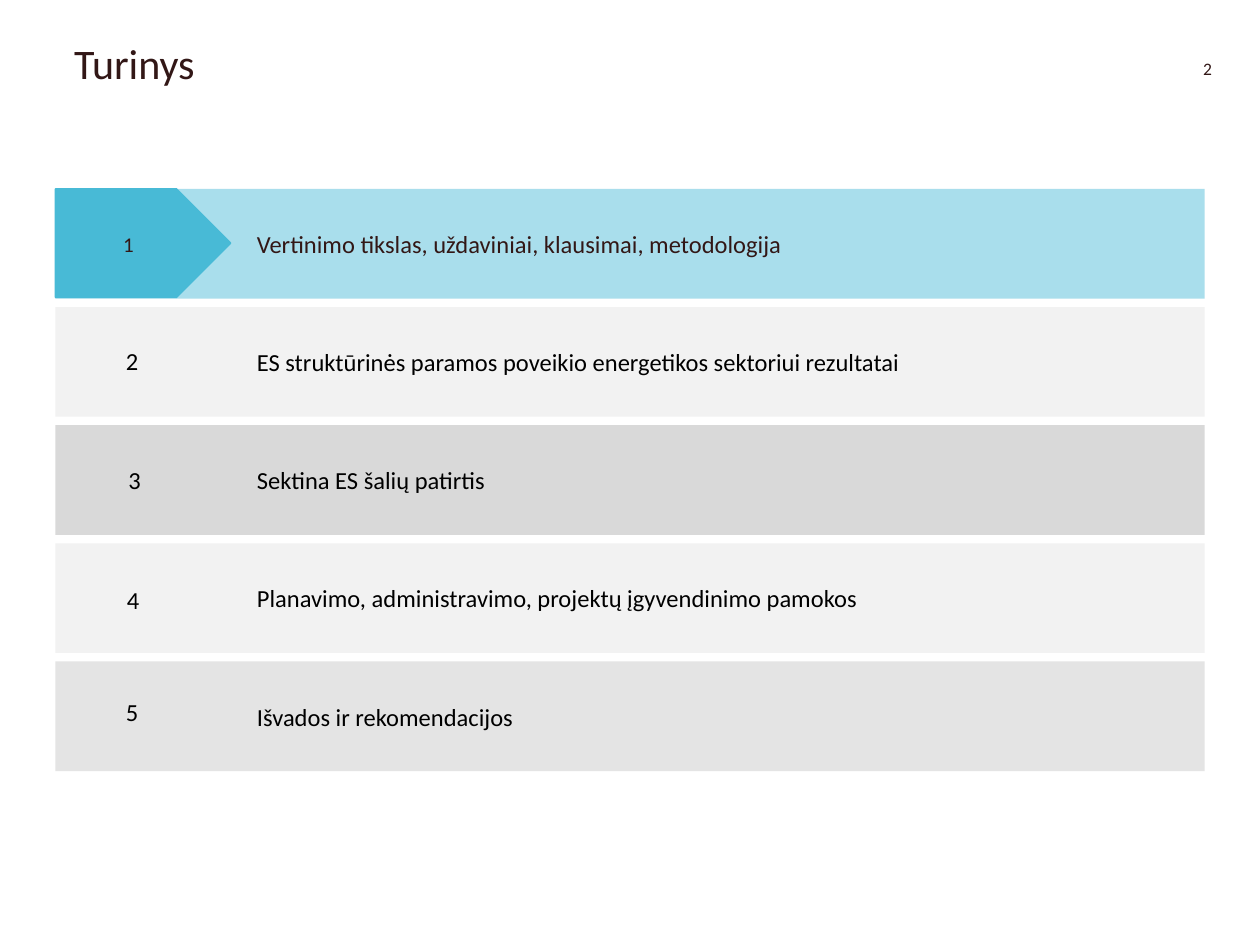
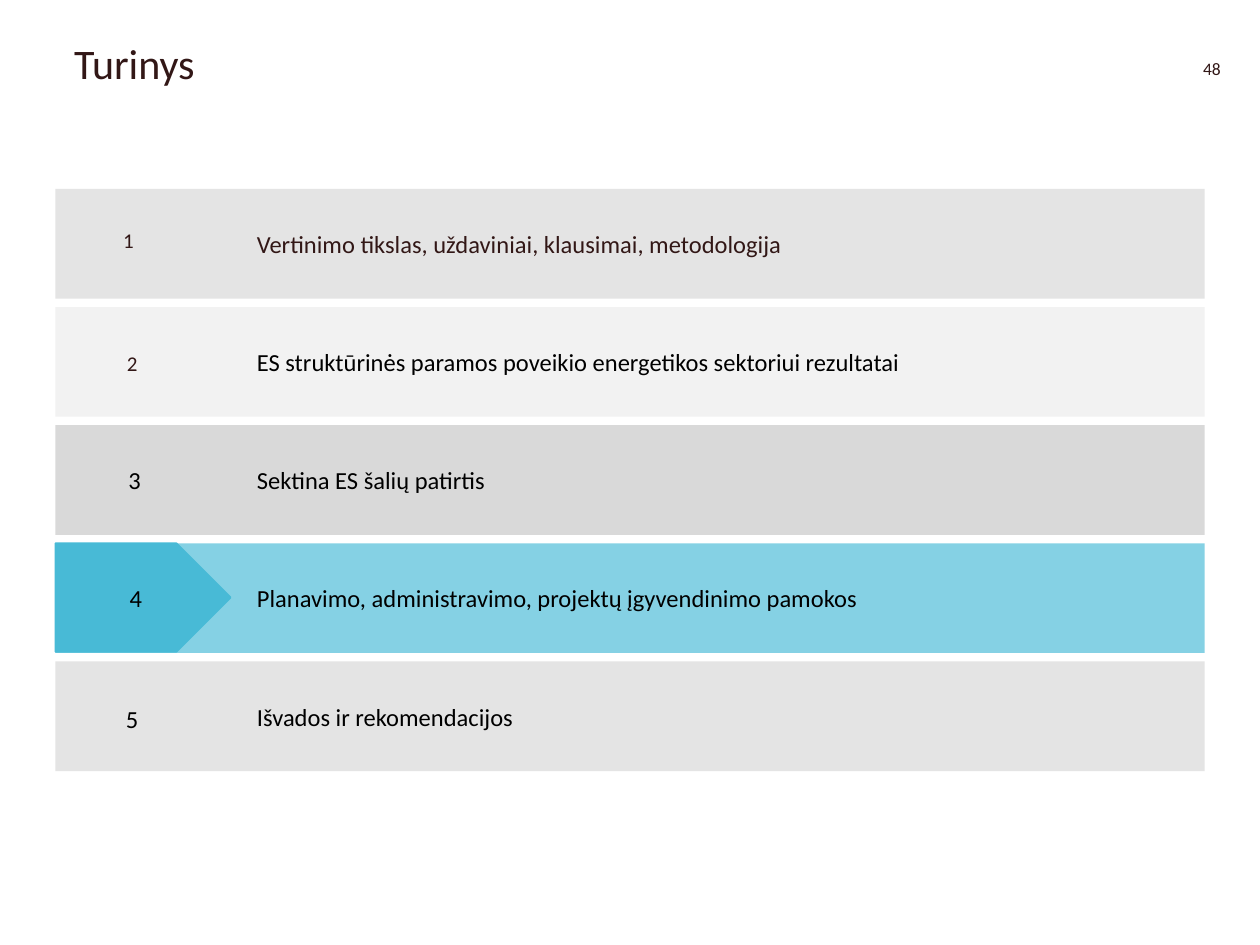
"""Build two agenda slides, each with one section marked as current."""
from dataclasses import dataclass

from lxml.etree import SubElement
from pptx import Presentation
from pptx.dml.color import RGBColor
from pptx.enum.shapes import MSO_SHAPE
from pptx.enum.text import MSO_ANCHOR
from pptx.oxml.ns import qn
from pptx.shapes.autoshape import Shape
from pptx.slide import Slide
from pptx.text.text import _Paragraph as Para
from pptx.util import Inches, Pt

FONT = "Calibri"
BROWN, BLACK = "321716", "000000"
GREY, PALE = "D9D9D9", "F2F2F2"
SKY, TEAL = "85D1E4", "48BAD6"
LEFT, WIDE, HIGH = 0.44, 9.12, 0.87
TOP, LAST = 1.5, 5.25
INDENT = 1.5


@dataclass
class Topic:
    """One section of the agenda."""
    text: str
    fill: str
    ink: str = BLACK
    alpha: int = 100


@dataclass
class Mark:
    """The place and style of a section number."""
    left: float
    top: float
    small: bool = False


@dataclass
class Page:
    """One agenda slide with its current section."""
    number: int
    active: int
    marks: list[Mark]


TOPICS = [
    Topic("Vertinimo tikslas, uždaviniai, klausimai, metodologija", GREY, BROWN, 70),
    Topic("ES struktūrinės paramos poveikio energetikos sektoriui rezultatai", PALE),
    Topic("Sektina ES šalių patirtis", GREY),
    Topic("Planavimo, administravimo, projektų įgyvendinimo pamokos", PALE),
    Topic("Išvados ir rekomendacijos", GREY, alpha=70),
]
STEP = (LAST - TOP) / (len(TOPICS) - 1)

PAGES = [
    Page(2, 0, [Mark(0.88, 1.77, True), Mark(0.9, 2.7), Mark(0.92, 3.64),
                Mark(0.91, 4.59), Mark(0.9, 5.48)]),
    Page(48, 3, [Mark(0.88, 1.74, True), Mark(0.91, 2.71, True), Mark(0.92, 3.64),
                 Mark(0.93, 4.58), Mark(0.9, 5.54)]),
]


def color(code: str) -> RGBColor:
    """Turn a hex string into a colour."""
    return RGBColor.from_string(code)


def write(para: Para, text: str, size: int, ink: str) -> None:
    """Add one styled run to a paragraph."""
    run = para.add_run()
    run.text = text
    run.font.name = FONT
    run.font.size = Pt(size)
    run.font.color.rgb = color(ink)


def label(slide: Slide, left: float, top: float, width: float, height: float,
          text: str, size: int, ink: str, wrap: bool = False) -> Para:
    """Place a line of text and return its paragraph."""
    frame = slide.shapes.add_textbox(
        Inches(left), Inches(top), Inches(width), Inches(height)).text_frame
    frame.word_wrap = wrap
    para = frame.paragraphs[0]
    write(para, text, size, ink)
    return para


def block(slide: Slide, kind: MSO_SHAPE, top: float, width: float,
          height: float, fill: str, alpha: int = 100) -> Shape:
    """Draw a flat shape at the left edge of the agenda."""
    shape = slide.shapes.add_shape(
        kind, Inches(LEFT), Inches(top), Inches(width), Inches(height))
    shape.shadow.inherit = False
    shape.fill.solid()
    shape.fill.fore_color.rgb = color(fill)
    shape.line.fill.background()
    if alpha < 100:
        tint = shape.fill._xPr.find(qn("a:solidFill"))[0]
        SubElement(tint, qn("a:alpha")).set("val", str(alpha * 1000))
    return shape


def draw_bar(slide: Slide, topic: Topic, top: float, active: bool) -> None:
    """Draw a section bar, with an arrow if it is current."""
    fill = SKY if active else topic.fill
    bar = block(slide, MSO_SHAPE.RECTANGLE, top, WIDE, HIGH, fill, topic.alpha)
    frame = bar.text_frame
    frame.word_wrap = True
    frame.vertical_anchor = MSO_ANCHOR.MIDDLE
    para = frame.paragraphs[0]
    props = para._p.get_or_add_pPr()
    props.set("marL", str(Inches(INDENT)))
    props.set("indent", "0")
    props.set("algn", "l")
    para.level = 3
    write(para, topic.text, 14, topic.ink)
    if active:
        arrow = block(slide, MSO_SHAPE.PENTAGON, top, 1.39, 0.86, TEAL)
        arrow.line.color.rgb = color(TEAL)
        arrow.line.width = Pt(1)


def draw_mark(slide: Slide, mark: Mark, text: str) -> None:
    """Draw a section number."""
    size, ink = (12, BROWN) if mark.small else (14, BLACK)
    para = label(slide, mark.left, mark.top, 0.3, 0.34, text, size, ink)
    if mark.small:
        para.line_spacing = 1.1
        para.space_after = Pt(3)


def draw_page(slide: Slide, page: Page) -> None:
    """Draw the title, page number and agenda."""
    label(slide, 9.45, 0.41, 0.37, 0.27, str(page.number), 10, BROWN)
    title = label(slide, 0.49, 0.29, 8.82, 1.18, "Turinys", 24, BROWN, True)
    title.line_spacing = 0.9
    for i, (topic, mark) in enumerate(zip(TOPICS, page.marks)):
        draw_bar(slide, topic, TOP + i * STEP, i == page.active)
        draw_mark(slide, mark, str(i + 1))


def main() -> None:
    """Build and save the deck."""
    deck = Presentation()
    deck.slide_width, deck.slide_height = Inches(10), Inches(7.5)
    for page in PAGES:
        draw_page(deck.slides.add_slide(deck.slide_layouts[6]), page)
    deck.save("out.pptx")


if __name__ == "__main__":
    main()
